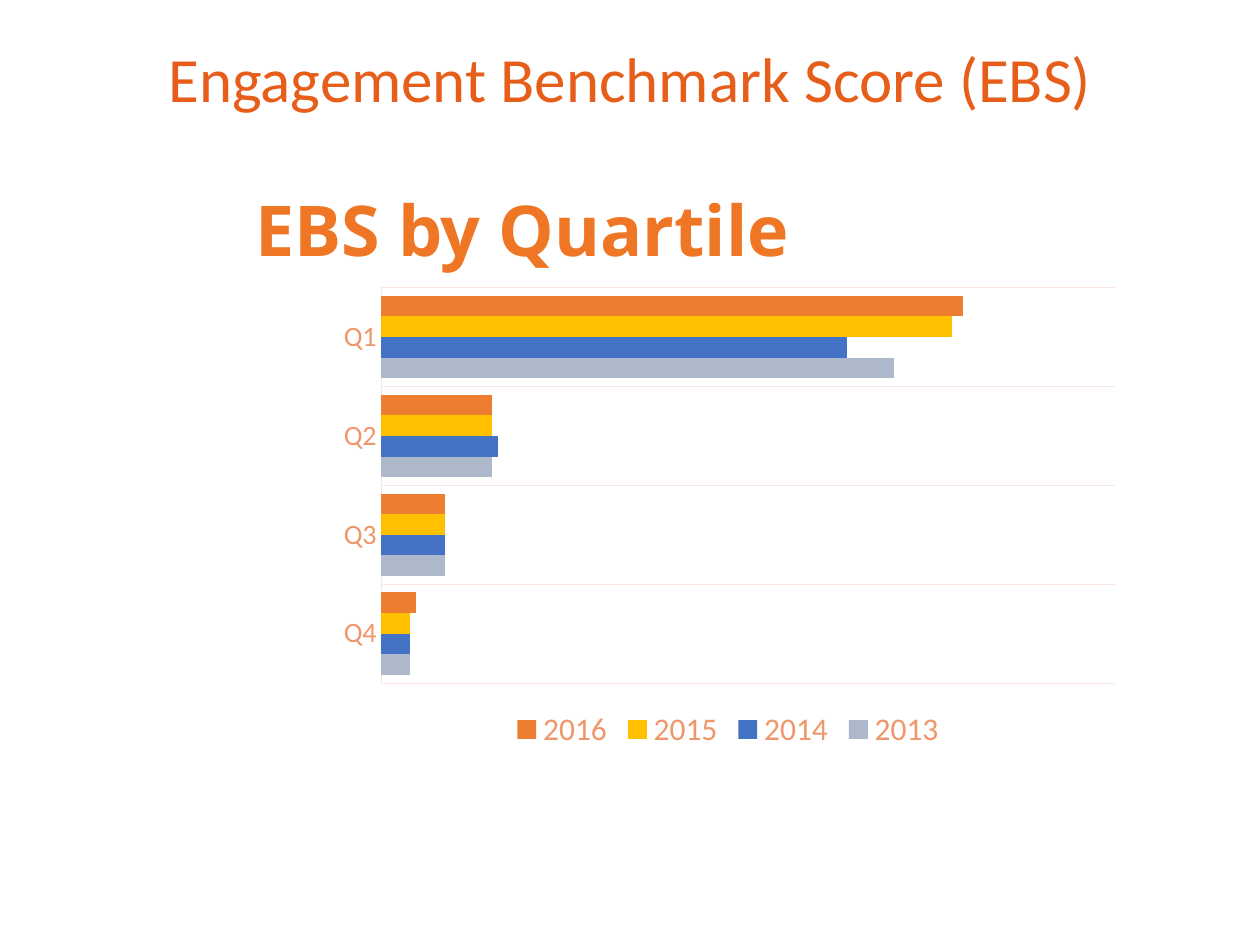
"""Build the Engagement Benchmark Score slide with its quartile bar chart."""
from dataclasses import dataclass

import pptx
import pptx.chart.data
import pptx.dml.color
import pptx.enum.chart
import pptx.enum.text
import pptx.oxml
import pptx.oxml.ns
import pptx.util

EMU_PER_PX = 914400 / 126
ORANGE = "E75E1A"
LABEL = "EF966A"
GRID = "FBE7DD"


@dataclass
class Heading:
    wording: str
    box: tuple[int, int, int, int]
    typeface: str
    size: int
    color: str
    bold: bool = False
    line_spacing: float = 1.0
    inset: int = 6


@dataclass
class Year:
    label: str
    scores: tuple[int, ...]
    color: str


HEADINGS = [
    Heading("EBS by Quartile", (243, 196, 888, 67), "Open Sans", 40, "EE7624", True, 0.9, 0),
    Heading("Engagement Benchmark Score (EBS)", (156, 34, 1006, 89), "Calibri", 36, ORANGE),
]
QUARTILES = ("Q4", "Q3", "Q2", "Q1")
YEARS = [
    Year("2013", (5, 11, 19, 88), "ADB9CA"),
    Year("2014", (5, 11, 20, 80), "4472C4"),
    Year("2015", (5, 11, 19, 98), "FFC000"),
    Year("2016", (6, 11, 19, 100), "ED7D31"),
]
CHART_BOX = (325, 278, 806, 477)
PLOT_LAYOUT = {"x": 0.07, "y": 0.02, "w": 0.91, "h": 0.83}


def px(length: int) -> int:
    return round(length * EMU_PER_PX)


def rgb(color: str) -> pptx.dml.color.RGBColor:
    return pptx.dml.color.RGBColor.from_string(color)


def style_font(font, typeface: str, size: int, color: str, bold: bool = False) -> None:
    font.name = typeface
    font.size = pptx.util.Pt(size)
    font.color.rgb = rgb(color)
    font.bold = bold


def style_line(line) -> None:
    line.color.rgb = rgb(GRID)
    line.width = pptx.util.Pt(0.75)


def add_heading(slide, heading: Heading) -> None:
    frame = slide.shapes.add_textbox(*map(px, heading.box)).text_frame
    frame.word_wrap = True
    frame.vertical_anchor = pptx.enum.text.MSO_ANCHOR.TOP
    frame.margin_top = frame.margin_bottom = px(heading.inset)
    paragraph = frame.paragraphs[0]
    paragraph.text = heading.wording
    paragraph.line_spacing = heading.line_spacing
    style_font(paragraph.font, heading.typeface, heading.size, heading.color, heading.bold)


def place_plot(chart) -> None:
    plot_area = chart.plots[0]._element.getparent()
    for layout in plot_area.findall(pptx.oxml.ns.qn("c:layout")):
        plot_area.remove(layout)
    modes = '<c:layoutTarget val="inner"/><c:xMode val="edge"/><c:yMode val="edge"/>'
    sizes = "".join(f'<c:{side} val="{share}"/>' for side, share in PLOT_LAYOUT.items())
    plot_area.insert(0, pptx.oxml.parse_xml(
        f'<c:layout {pptx.oxml.ns.nsdecls("c")}>'
        f"<c:manualLayout>{modes}{sizes}</c:manualLayout></c:layout>"))


def add_quartile_chart(slide) -> None:
    scores = pptx.chart.data.CategoryChartData(number_format="#,##0")
    scores.categories = QUARTILES
    for year in YEARS:
        scores.add_series(year.label, year.scores)
    chart = slide.shapes.add_chart(
        pptx.enum.chart.XL_CHART_TYPE.BAR_CLUSTERED, *map(px, CHART_BOX), scores).chart
    chart.has_title = False
    style_font(chart.font, "Calibri", 10, ORANGE)

    bars = chart.plots[0]
    bars.gap_width = 79
    bars.overlap = 0
    bars.vary_by_categories = False
    for year, series in zip(YEARS, bars.series):
        series.format.fill.solid()
        series.format.fill.fore_color.rgb = rgb(year.color)

    quartile_axis = chart.category_axis
    quartile_axis.major_tick_mark = pptx.enum.chart.XL_TICK_MARK.NONE
    quartile_axis.has_major_gridlines = True
    style_line(quartile_axis.format.line)
    style_line(quartile_axis.major_gridlines.format.line)
    style_font(quartile_axis.tick_labels.font, "Calibri", 16, LABEL)

    score_axis = chart.value_axis
    score_axis.has_major_gridlines = False
    score_axis.minimum_scale = 0
    score_axis.maximum_scale = 126
    score_axis.visible = False

    chart.has_legend = True
    chart.legend.position = pptx.enum.chart.XL_LEGEND_POSITION.BOTTOM
    chart.legend.include_in_layout = False
    style_font(chart.legend.font, "Calibri", 18, LABEL)
    place_plot(chart)


def main() -> None:
    deck = pptx.Presentation()
    deck.slide_width, deck.slide_height = px(1260), px(945)
    slide = deck.slides.add_slide(deck.slide_layouts[6])
    add_quartile_chart(slide)
    for heading in HEADINGS:
        add_heading(slide, heading)
    deck.save("out.pptx")


if __name__ == "__main__":
    main()
